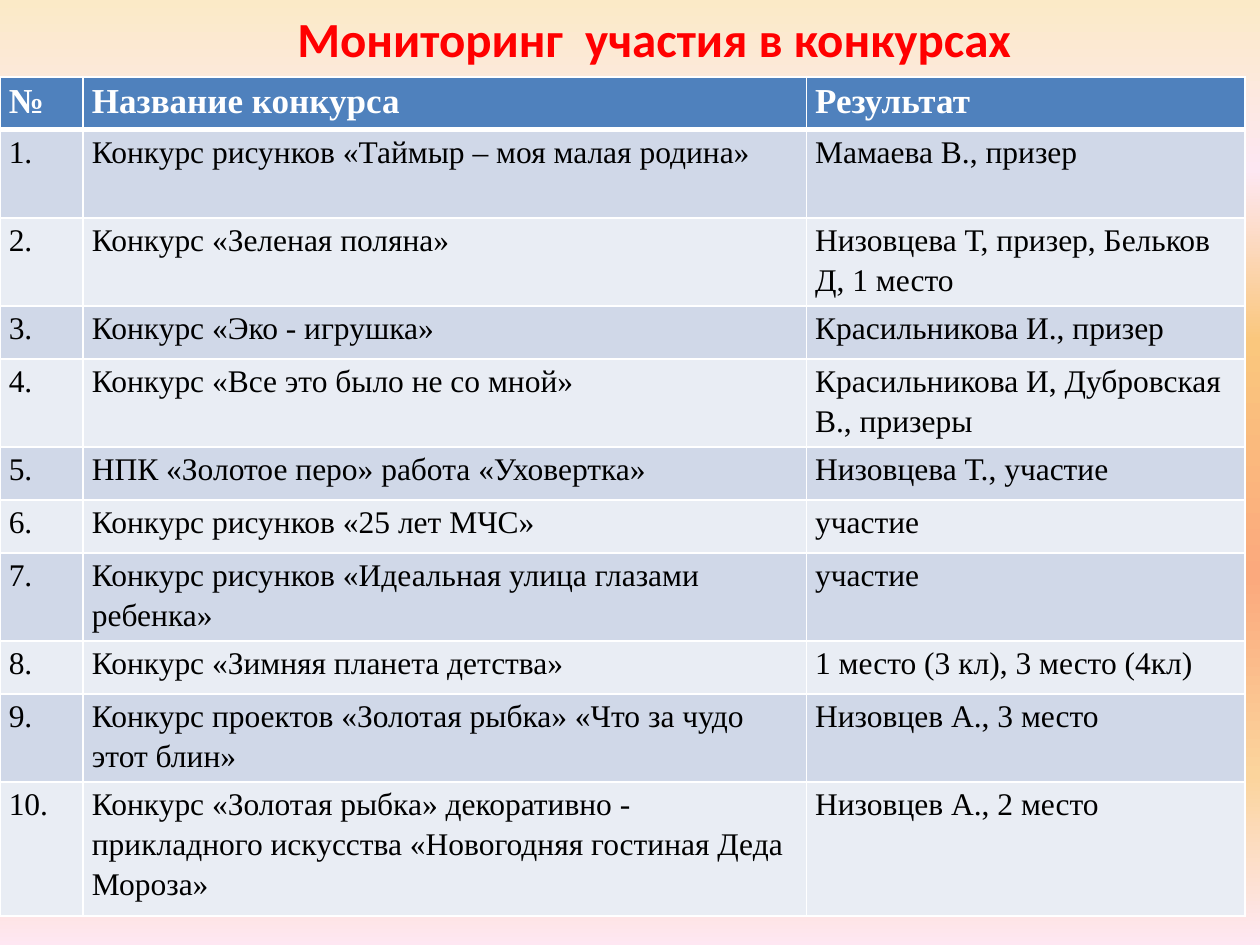
from typing import NamedTuple

from lxml.etree import SubElement
from pptx import Presentation
from pptx.dml.color import RGBColor
from pptx.enum.text import MSO_ANCHOR, PP_ALIGN
from pptx.oxml.ns import qn
from pptx.util import Inches, Pt

COLORS = {
    "title": "FF0000",
    "header": "4F81BD",
    "odd_row": "D0D8E8",
    "even_row": "E9EDF4",
    "white": "FFFFFF",
    "black": "000000",
}
BACKGROUND_STOPS = [(0, "FBEAC7"), (18, "FEE7F2"), (36, "FAC77D"),
                    (61, "FBA97D"), (82, "FBD49C"), (100, "FEE7F2")]
COLUMN_WIDTHS = [0.66, 5.74, 3.48]
HEADER = ("№", "Название конкурса", "Результат")
ONE_LINE, TWO_LINES, THREE_LINES = 0.42, 0.7, 1.06


class Contest(NamedTuple):
    name: str
    result: str
    height: float = ONE_LINE


CONTESTS = [
    Contest("Конкурс рисунков «Таймыр – моя малая родина»",
            "Мамаева В., призер", TWO_LINES),
    Contest("Конкурс «Зеленая поляна»",
            "Низовцева Т, призер, Бельков Д, 1 место", TWO_LINES),
    Contest("Конкурс «Эко - игрушка»", "Красильникова И., призер"),
    Contest("Конкурс «Все это было не со мной»",
            "Красильникова И, Дубровская В., призеры", TWO_LINES),
    Contest("НПК «Золотое перо» работа «Уховертка»", "Низовцева Т., участие"),
    Contest("Конкурс рисунков «25 лет МЧС»", "участие"),
    Contest("Конкурс рисунков «Идеальная улица глазами ребенка»",
            "участие", TWO_LINES),
    Contest("Конкурс «Зимняя планета детства»", "1 место (3 кл), 3 место (4кл)"),
    Contest("Конкурс проектов «Золотая рыбка» «Что за чудо этот блин»",
            "Низовцев А., 3 место", TWO_LINES),
    Contest("Конкурс «Золотая рыбка» декоративно - прикладного искусства "
            "«Новогодняя гостиная Деда Мороза»",
            "Низовцев А., 2 место", THREE_LINES),
]


def write_text(frame, text: str, *, size: float, color: str, font: str,
               bold: bool = False, align=PP_ALIGN.LEFT,
               line_spacing: float = 1.0) -> None:
    paragraph = frame.paragraphs[0]
    paragraph.alignment = align
    paragraph.line_spacing = line_spacing
    run = paragraph.add_run()
    run.text = text
    run.font.size = Pt(size)
    run.font.name = font
    run.font.bold = bold
    run.font.color.rgb = RGBColor.from_string(COLORS[color])


def paint_background(slide) -> None:
    fill = slide.background.fill
    fill.gradient()
    fill.gradient_angle = 270  # counter-clockwise, so top to bottom
    stops = slide.element.find(".//" + qn("a:gsLst"))
    for stop in list(stops):
        stops.remove(stop)
    for percent, color in BACKGROUND_STOPS:
        stop = SubElement(stops, qn("a:gs"), pos=str(percent * 1000))
        SubElement(stop, qn("a:srgbClr"), val=color)


def set_borders(cell, bottom: float = 1, top: float = 1) -> None:
    """Draw white borders; call before the fill, which must follow them."""
    properties = cell._tc.get_or_add_tcPr()
    for side, width in (("L", 1), ("R", 1), ("T", top), ("B", bottom)):
        line = SubElement(properties, qn(f"a:ln{side}"), w=str(Pt(width)))
        solid = SubElement(line, qn("a:solidFill"))
        SubElement(solid, qn("a:srgbClr"), val=COLORS["white"])


def fill_row(table, row: int, texts: tuple, fill: str, *, size: float,
             color: str, bold: bool = False, top: float = 1,
             bottom: float = 1) -> None:
    for column, text in enumerate(texts):
        cell = table.cell(row, column)
        set_borders(cell, bottom, top)
        cell.fill.solid()
        cell.fill.fore_color.rgb = RGBColor.from_string(COLORS[fill])
        cell.margin_left = cell.margin_right = Inches(0.07)
        cell.margin_top = cell.margin_bottom = 0
        write_text(cell.text_frame, text, size=size, color=color, bold=bold,
                   font="Times New Roman", line_spacing=1.15)


def add_contest_table(slide) -> None:
    heights = [ONE_LINE] + [contest.height for contest in CONTESTS]
    table = slide.shapes.add_table(
        len(heights), len(COLUMN_WIDTHS), 0, Inches(0.61),
        Inches(sum(COLUMN_WIDTHS)), Inches(sum(heights))).table
    for column, width in zip(table.columns, COLUMN_WIDTHS):
        column.width = Inches(width)
    for row, height in zip(table.rows, heights):
        row.height = Inches(height)

    fill_row(table, 0, HEADER, "header", size=20, color="white", bold=True,
             bottom=3)
    for number, contest in enumerate(CONTESTS, start=1):
        fill_row(table, number, (f"{number}.", contest.name, contest.result),
                 "odd_row" if number % 2 else "even_row",
                 size=18, color="black", top=3 if number == 1 else 1)


def add_title(slide) -> None:
    title = slide.shapes.title
    title.left, title.top = Inches(0.9), Inches(0.02)
    title.width, title.height = Inches(8.58), Inches(0.57)
    title.text_frame.word_wrap = True
    title.text_frame.vertical_anchor = MSO_ANCHOR.TOP
    write_text(title.text_frame, "Мониторинг  участия в конкурсах", size=28,
               color="title", font="Calibri", bold=True,
               align=PP_ALIGN.CENTER)


def main() -> None:
    presentation = Presentation()
    presentation.slide_width = Inches(10)
    presentation.slide_height = Inches(7.5)
    slide = presentation.slides.add_slide(presentation.slide_layouts[5])
    paint_background(slide)
    add_contest_table(slide)
    add_title(slide)
    presentation.save("out.pptx")


if __name__ == "__main__":
    main()
